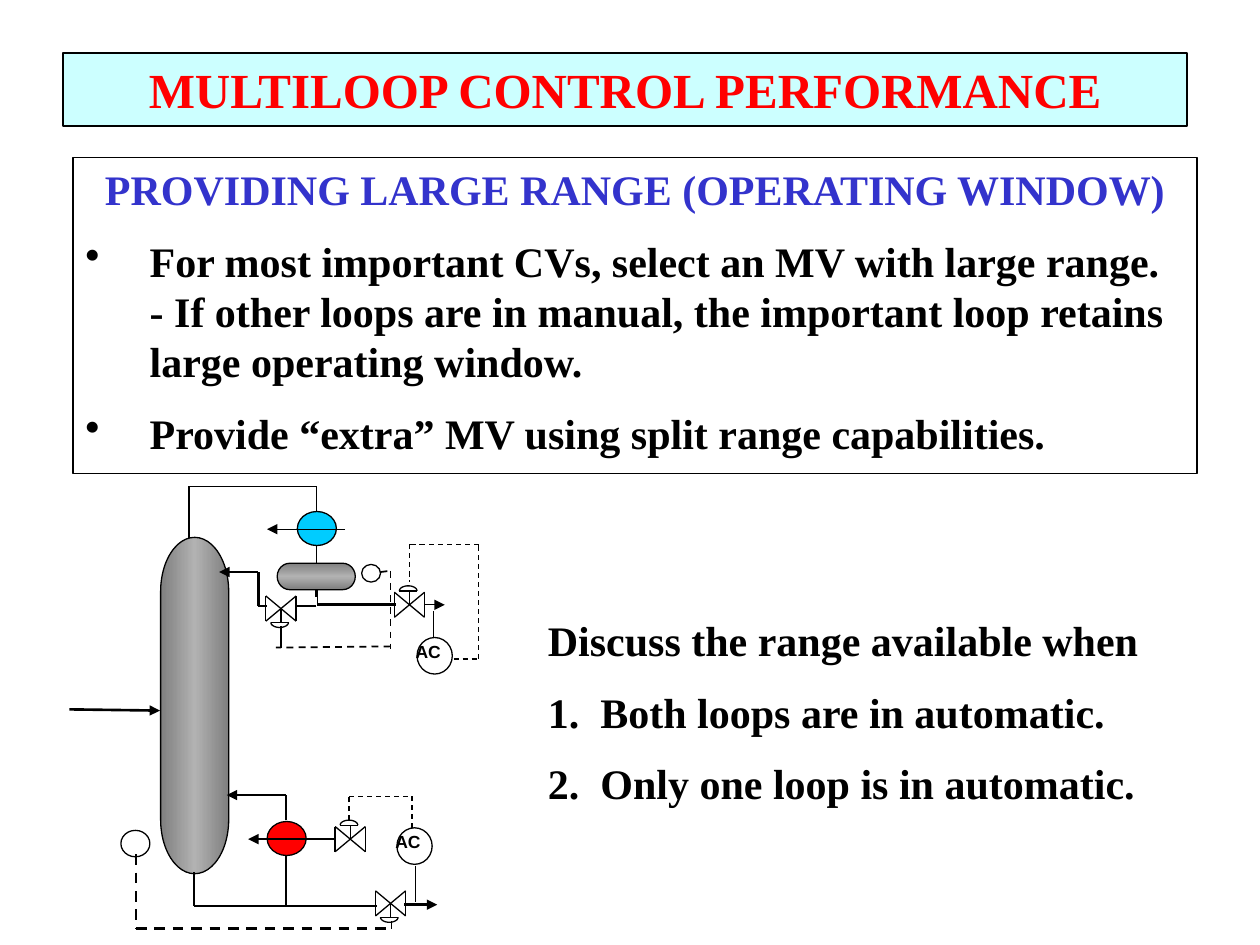
from itertools import pairwise
from math import cos, pi, sin

from lxml import etree
from pptx import Presentation
from pptx.dml.color import RGBColor
from pptx.enum.dml import MSO_LINE
from pptx.enum.shapes import MSO_CONNECTOR, MSO_SHAPE
from pptx.enum.text import MSO_AUTO_SIZE, PP_ALIGN
from pptx.oxml import parse_xml
from pptx.oxml.ns import nsdecls, qn
from pptx.util import Inches, Pt

COLORS = {
    "black": "000000", "red": "FF0000", "blue": "3333CC", "cyan": "00CCFF",
    "title fill": "CCFFFF", "steel edge": "7F7F7F", "steel middle": "B2B2B2",
}

TITLE = ["MULTILOOP CONTROL PERFORMANCE"]
HEADING = "PROVIDING LARGE RANGE (OPERATING WINDOW)"
GUIDELINES = [
    # text, bulleted
    ("For most important CVs, select an MV with large range.", True),
    ("\t- If other loops are in manual, the important loop retains large operating window.", False),
    ("Provide “extra” MV using split range capabilities.", True),
]
QUESTIONS = [
    "Discuss the range available when",
    "1.  Both loops are in automatic.",
    "2.  Only one loop is in automatic.",
]

CIRCLES = [
    # left, top, width, height, fill
    (2.12, 6.52, 0.31, 0.27, "red"),    # reboiler
    (2.36, 4.06, 0.31, 0.27, "cyan"),   # condenser
    (2.87, 4.48, 0.15, 0.14, None),     # drum level sensor
    (0.96, 6.59, 0.23, 0.21, None),     # bottoms level sensor
]
ANALYZERS = [(3.15, 6.57), (3.31, 5.06)]
VALVES = [
    # centre x, centre y, side of the actuator: -1 above, 1 below
    (3.25, 4.8, -1), (2.23, 4.83, 1), (3.1, 7.17, 1), (2.78, 6.66, -1),
]

# Each route is a list of corner points.
THIN_PIPES = [
    [(2.51, 4.06), (2.51, 3.86), (1.5, 3.86), (1.5, 4.27)],
    [(2.51, 4.33), (2.51, 4.47)],
    [(2.52, 4.74), (2.52, 4.8)],
    [(2.05, 4.81), (2.12, 4.81)],
    [(3.11, 7.37), (3.11, 7.31)],
    [(2.23, 5.14), (2.23, 4.97)],
    [(3.3, 6.87), (3.3, 7.16)],
    [(3.44, 5.06), (3.44, 4.85)],
]
THIN_ARROWS = [[(3.37, 4.8), (3.53, 4.8)], [(2.74, 4.2), (2.12, 4.2)]]
THICK_PIPES = [
    [(1.54, 6.92), (1.54, 7.19), (2.99, 7.19)],
    [(2.27, 6.79), (2.27, 7.19)],
    [(2.52, 4.8), (3.14, 4.8)],
    [(2.51, 4.68), (2.51, 4.74)],
    [(2.51, 4.81), (2.36, 4.81)],
]
THICK_ARROWS = [
    [(0.55, 5.63), (1.27, 5.64)],
    [(2.27, 6.51), (2.27, 6.31), (1.8, 6.31)],
    [(2.66, 6.66), (1.97, 6.66)],
    [(2.05, 4.81), (2.05, 4.54), (1.74, 4.54)],
    [(3.21, 7.18), (3.47, 7.18)],
]
ANALYZER_SIGNALS = [
    [(2.77, 6.51), (2.77, 6.32), (3.27, 6.32), (3.27, 6.57)],
    [(3.6, 5.23), (3.8, 5.23), (3.8, 4.32), (3.25, 4.32), (3.25, 4.62)],
]
DRUM_SIGNALS = [
    [(3.02, 4.54), (3.1, 4.53), (3.1, 5.15)],
    [(3.1, 5.13), (2.19, 5.14)],
]
BOTTOMS_SIGNALS = [[(1.08, 6.78), (1.08, 7.37), (3.1, 7.37)]]

ROUTES = [
    # routes, width in points, dashed, arrow at the end
    (THIN_PIPES, 0.75, False, False),
    (THIN_ARROWS, 0.75, False, True),
    (THICK_PIPES, 1.5, False, False),
    (THICK_ARROWS, 1.5, False, True),
    (ANALYZER_SIGNALS, 0.75, True, False),
    (DRUM_SIGNALS, 1, True, False),
    (BOTTOMS_SIGNALS, 1.5, True, False),
]

presentation = Presentation()
presentation.slide_width, presentation.slide_height = Inches(10), Inches(7.5)
slide = presentation.slides.add_slide(presentation.slide_layouts[6])


def color(name):
    return RGBColor.from_string(COLORS[name])


def style(shape, fill=None):
    shape.shadow.inherit = False
    if fill:
        shape.fill.solid()
        shape.fill.fore_color.rgb = color(fill)
    else:
        shape.fill.background()
    shape.line.color.rgb = color("black")
    shape.line.width = Pt(0.75)


def add_preset(kind, left, top, width, height, fill=None):
    shape = slide.shapes.add_shape(kind, *map(Inches, (left, top, width, height)))
    style(shape, fill)
    return shape


def add_vessel(left, top, width, height, angle, rotation=0):
    """Rounded vessel shaded from edge to middle; the shading keeps to the page when it turns."""
    shape = add_preset(MSO_SHAPE.FLOWCHART_TERMINATOR, left, top, width, height)
    shape.rotation = rotation
    edge, middle = COLORS["steel edge"], COLORS["steel middle"]
    stops = "".join(f'<a:gs pos="{position}"><a:srgbClr val="{value}"/></a:gs>'
                    for position, value in ((0, edge), (50000, middle), (100000, edge)))
    properties = shape._element.spPr
    properties.replace(properties.find(qn("a:noFill")), parse_xml(
        f'<a:gradFill {nsdecls("a")} rotWithShape="0"><a:gsLst>{stops}</a:gsLst>'
        f'<a:lin ang="{angle * 60000}" scaled="1"/></a:gradFill>'))


def add_line(start, end, width=0.75, dashed=False, arrow=False):
    connector = slide.shapes.add_connector(
        MSO_CONNECTOR.STRAIGHT, *map(Inches, (*start, *end)))
    connector.line.color.rgb = color("black")
    connector.line.width = Pt(width)
    if dashed:
        connector.line.dash_style = MSO_LINE.DASH
    if arrow:
        etree.SubElement(connector.line._get_or_add_ln(), qn("a:tailEnd"), type="triangle")
    etree.SubElement(connector._element.spPr, qn("a:effectLst"))


def add_valve(x, y, side):
    left, right, top, bottom = x - 0.12, x + 0.12, y - 0.1, y + 0.1
    cap = y + side * 0.11
    for start, end in [
        ((left, top), (left, bottom)), ((right, top), (right, bottom)),
        ((left, top), (right, bottom)), ((right, top), (left, bottom)),
        ((x, y), (x, cap)), ((x - 0.08, cap), (x + 0.06, cap)),
    ]:
        add_line(start, end)
    steps = 16
    dome = [(Inches(x - 0.01 + 0.07 * cos(pi * step / steps)),
             Inches(cap + side * 0.04 * sin(pi * step / steps))) for step in range(steps + 1)]
    builder = slide.shapes.build_freeform(*dome[0])
    builder.add_line_segments(dome[1:], close=False)
    style(builder.convert_to_shape())


def write(frame, text, size=24, font="Times New Roman", ink="black", align=PP_ALIGN.LEFT,
          before=50, hanging=0, bullet=False, first=False):
    """Write one paragraph; before is a percentage of the line, hanging is in inches."""
    paragraph = frame.paragraphs[0] if first else frame.add_paragraph()
    paragraph.alignment = align
    properties = paragraph._p.get_or_add_pPr()
    if hanging:
        properties.set("marL", str(Inches(hanging)))
        properties.set("indent", str(-Inches(hanging)))
    if before:
        spacing = etree.SubElement(properties, qn("a:spcBef"))
        etree.SubElement(spacing, qn("a:spcPct"), val=str(before * 1000))
    if bullet:
        etree.SubElement(properties, qn("a:buChar"), char="•")
    run = paragraph.add_run()
    run.text = text
    run.font.size, run.font.name, run.font.bold = Pt(size), font, True
    run.font.color.rgb = color(ink)


def add_text(left, top, width, height, lines, wrap=True, boxed=False, fill=None, **text_format):
    box = slide.shapes.add_textbox(*map(Inches, (left, top, width, height)))
    if boxed:
        style(box, fill)
    box.text_frame.word_wrap = wrap
    box.text_frame.auto_size = MSO_AUTO_SIZE.SHAPE_TO_FIT_TEXT
    for index, line in enumerate(lines):
        write(box.text_frame, line, first=index == 0, **text_format)
    return box.text_frame


add_text(0.5, 0.42, 8.92, 0.58, TITLE, boxed=True, fill="title fill",
         size=28, ink="red", align=PP_ALIGN.CENTER)
guidelines = add_text(0.58, 1.25, 8.92, 2.51, [HEADING], boxed=True,
                      ink="blue", align=PP_ALIGN.CENTER, hanging=0.51)
for text, bulleted in GUIDELINES:
    write(guidelines, text, hanging=0.51, bullet=bulleted, before=50 if bulleted else 0)

add_vessel(0.21, 5.33, 2.67, 0.54, angle=0, rotation=90)
add_vessel(2.2, 4.47, 0.62, 0.21, angle=90)
for *place, fill in CIRCLES:
    add_preset(MSO_SHAPE.OVAL, *place, fill)
for routes, width, dashed, arrow in ROUTES:
    for route in routes:
        for start, end in pairwise(route):
            add_line(start, end, width, dashed, arrow and end == route[-1])
for valve in VALVES:
    add_valve(*valve)
for left, top in ANALYZERS:
    add_text(left - 0.11, top - 0.02, 0.4, 0.27, ["AC"], wrap=False,
             size=10, font="Arial", before=0)
    add_preset(MSO_SHAPE.OVAL, left, top, 0.28, 0.29)

add_text(4.25, 4.83, 5.25, 1.7, QUESTIONS)

presentation.save("out.pptx")
